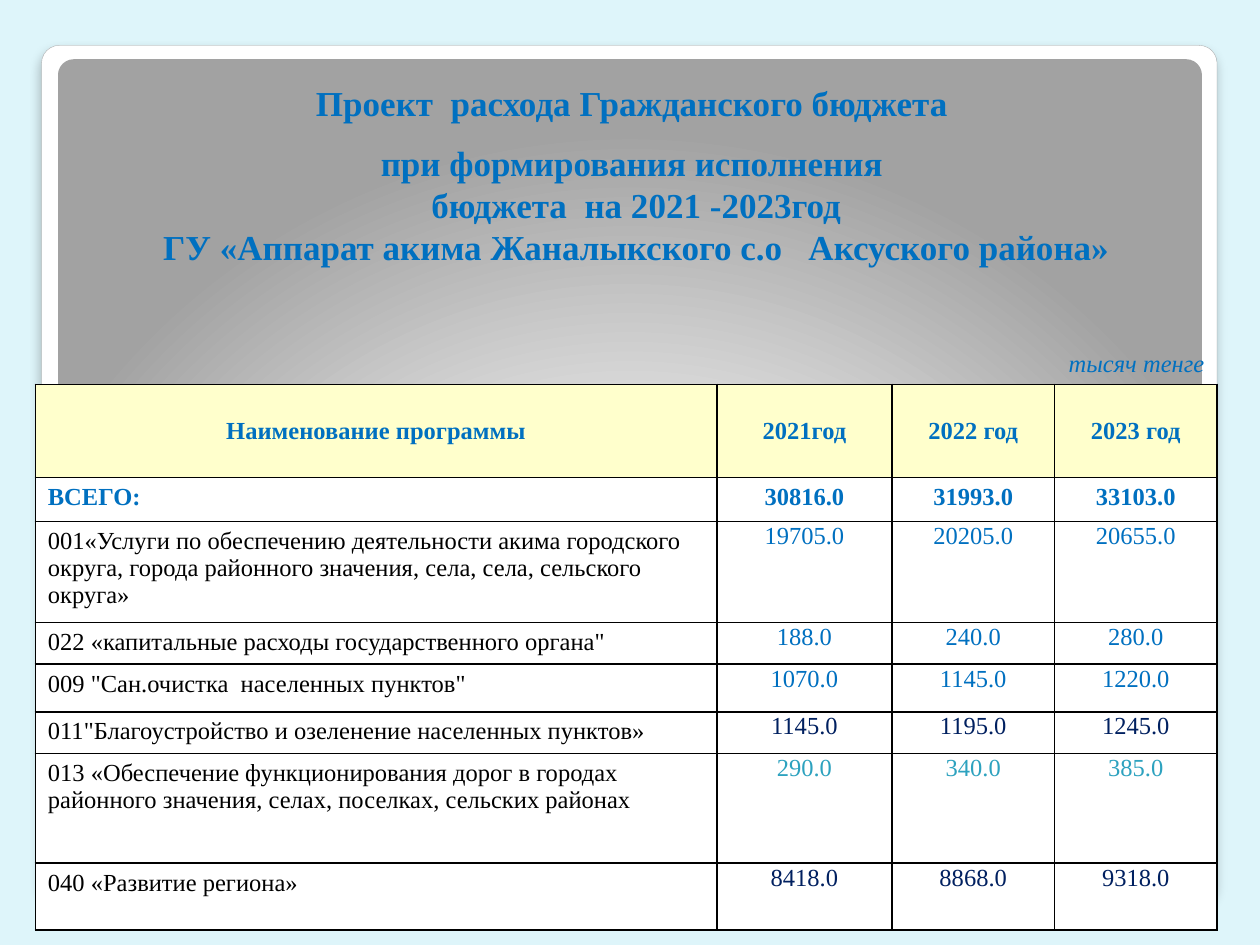
from lxml.etree import SubElement
from pptx import Presentation
from pptx.dml.color import RGBColor
from pptx.enum.shapes import MSO_SHAPE
from pptx.enum.text import MSO_ANCHOR, PP_ALIGN
from pptx.oxml import parse_xml
from pptx.oxml.ns import nsdecls, qn
from pptx.util import Inches, Pt

FONT = "Times New Roman"
BLACK = RGBColor(0, 0, 0)
WHITE = RGBColor(255, 255, 255)
BLUE = RGBColor(0x00, 0x70, 0xC0)
NAVY = RGBColor(0x00, 0x20, 0x60)
TEAL = RGBColor(0x2D, 0xA2, 0xBF)
CREAM = RGBColor(0xFF, 0xFF, 0xCC)
ICE = RGBColor(0xDE, 0xF5, 0xFA)
GRAY = RGBColor(0xA4, 0xA4, 0xA4)
SILVER = RGBColor(0xE1, 0xE1, 0xE1)
STEEL = RGBColor(0xA2, 0xA2, 0xA2)
EDGE_LIGHT = RGBColor(0xF7, 0xF7, 0xF7)
EDGE_DARK = RGBColor(0xDA, 0xDA, 0xDA)

NO_STYLE = "{2D5ABB26-0587-4C30-8999-92F81FD0307C}"
VERTICAL = '<a:lin ang="5400000" scaled="0"/>'
RADIAL = ('<a:path path="circle">'
          '<a:fillToRect l="50000" t="175000" r="50000" b="-75000"/></a:path>')
WIDE_INSETS = (0.1, 0.05, 0.1, 0.05)
TIGHT_INSETS = (0.01, 0.01, 0.01, 0)

TITLE = ("Проект  расхода Гражданского бюджета ",
         "при формирования исполнения \nбюджета  на 2021 -2023год\n"
         "ГУ «Аппарат акима Жаналыкского с.о   Аксуского района»")
COLUMN_WIDTHS = (5.41, 1.39, 1.29, 1.29)
UNIT_HEIGHT = 0.56
HEADER = ("Наименование программы", "2021год", "2022 год", "2023 год")
HEADER_HEIGHT = 0.74
TOTAL = ("ВСЕГО:", "30816.0", "31993.0", "33103.0")
TOTAL_HEIGHT = 0.35
PROGRAMS = (
    (0.8, BLUE, ("001«Услуги по обеспечению деятельности акима городского округа, "
                 "города районного значения, села, села, сельского округа»",
                 "19705.0", "20205.0", "20655.0")),
    (0.33, BLUE, ('022 «капитальные расходы государственного органа"',
                  "188.0", "240.0", "280.0")),
    (0.38, BLUE, ('009 "Сан.очистка  населенных пунктов"',
                  "1070.0", "1145.0", "1220.0")),
    (0.33, NAVY, ('011"Благоустройство и озеленение населенных пунктов»',
                  "1145.0", "1195.0", "1245.0")),
    (0.87, TEAL, ("013 «Обеспечение функционирования дорог в городах районного "
                  "значения, селах, поселках, сельских районах",
                  "290.0", "340.0", "385.0")),
    (0.53, NAVY, ("040 «Развитие региона»", "8418.0", "8868.0", "9318.0")),
)


def set_font(paragraph, size, color, bold=False, italic=False):
    font = paragraph.font
    font.name, font.size, font.bold, font.italic = FONT, Pt(size), bold, italic
    font.color.rgb = color


def add_panel(slide, box, stops, direction):
    shape = slide.shapes.add_shape(MSO_SHAPE.ROUNDED_RECTANGLE, *map(Inches, box))
    shape.adjustments[0] = 0.021
    shape.shadow.inherit = False
    shape.line.fill.background()
    shape.fill.background()
    stop_list = "".join(
        f'<a:gs pos="{position * 1000}"><a:srgbClr val="{color}"/></a:gs>'
        for position, color in stops)
    gradient = parse_xml(f'<a:gradFill {nsdecls("a")} rotWithShape="1">'
                         f'<a:gsLst>{stop_list}</a:gsLst>{direction}</a:gradFill>')
    properties = shape.element.spPr
    properties.replace(properties.find(qn("a:noFill")), gradient)
    return shape


def add_soft_shadow(shape):
    effects = shape.element.spPr.find(qn("a:effectLst"))
    shadow = SubElement(effects, qn("a:outerShdw"), blurRad=str(Pt(6)),
                        dist=str(Pt(4)), dir="5400000", algn="tl", rotWithShape="0")
    color = SubElement(shadow, qn("a:srgbClr"), val=str(BLACK))
    SubElement(color, qn("a:alpha"), val="25000")


def add_title(slide, box):
    frame = slide.shapes.add_textbox(*map(Inches, box)).text_frame
    frame.word_wrap = True
    frame.vertical_anchor = MSO_ANCHOR.BOTTOM
    for index, text in enumerate(TITLE):
        paragraph = frame.add_paragraph() if index else frame.paragraphs[0]
        paragraph.text = text
        paragraph.alignment = PP_ALIGN.CENTER
        paragraph.space_before = Pt(10 * index)
        set_font(paragraph, 20, BLUE, bold=True)


def set_borders(cell, sides):
    properties = cell._tc.get_or_add_tcPr()
    for index, side in enumerate(sides):
        properties.insert(index, parse_xml(
            f'<a:ln{side} {nsdecls("a")} w="{Pt(1)}"><a:solidFill>'
            f'<a:srgbClr val="{BLACK}"/></a:solidFill></a:ln{side}>'))


def fill_cell(cell, text, color, fill=WHITE, insets=WIDE_INSETS,
              align=PP_ALIGN.CENTER, anchor=MSO_ANCHOR.TOP, bold=False, italic=False):
    cell.text = text
    cell.vertical_anchor = anchor
    (cell.margin_left, cell.margin_top,
     cell.margin_right, cell.margin_bottom) = map(Inches, insets)
    if fill is None:
        cell.fill.background()
    else:
        cell.fill.solid()
        cell.fill.fore_color.rgb = fill
    paragraph = cell.text_frame.paragraphs[0]
    paragraph.alignment = align
    set_font(paragraph, 14, color, bold, italic)


def add_budget_table(slide, left, top):
    heights = (UNIT_HEIGHT, HEADER_HEIGHT, TOTAL_HEIGHT, *(row[0] for row in PROGRAMS))
    table = slide.shapes.add_table(
        len(heights), len(COLUMN_WIDTHS), Inches(left), Inches(top),
        Inches(sum(COLUMN_WIDTHS)), Inches(sum(heights))).table
    table.first_row = table.horz_banding = False
    table._tbl.tblPr.find(qn("a:tableStyleId")).text = NO_STYLE
    for column, width in zip(table.columns, COLUMN_WIDTHS):
        column.width = Inches(width)
    for row, height in zip(table.rows, heights):
        row.height = Inches(height)

    table.cell(0, 2).merge(table.cell(0, 3))
    fill_cell(table.cell(0, 2), "тысяч тенге", BLUE, fill=None,
              align=PP_ALIGN.RIGHT, anchor=MSO_ANCHOR.BOTTOM, italic=True)
    for column, (name, total) in enumerate(zip(HEADER, TOTAL)):
        fill_cell(table.cell(1, column), name, BLUE, fill=CREAM,
                  anchor=MSO_ANCHOR.MIDDLE, bold=True)
        fill_cell(table.cell(2, column), total, BLUE, bold=True,
                  align=PP_ALIGN.CENTER if column else PP_ALIGN.LEFT)
    for row, (_, color, (program, *amounts)) in enumerate(PROGRAMS, start=3):
        fill_cell(table.cell(row, 0), program, BLACK, align=PP_ALIGN.LEFT)
        for column, amount in enumerate(amounts, start=1):
            fill_cell(table.cell(row, column), amount, color, insets=TIGHT_INSETS)
    for row in range(len(heights)):
        for column in range(len(COLUMN_WIDTHS)):
            set_borders(table.cell(row, column), "LRTB" if row else "B")


def main():
    presentation = Presentation()
    presentation.slide_width, presentation.slide_height = Inches(10), Inches(7.5)
    slide = presentation.slides.add_slide(presentation.slide_layouts[6])
    slide.background.fill.solid()
    slide.background.fill.fore_color.rgb = ICE

    frame = add_panel(slide, (0.33, 0.36, 9.33, 6.78),
                      ((0, WHITE), (98, WHITE), (99, EDGE_LIGHT), (100, EDGE_DARK)),
                      VERTICAL)
    frame.line.color.rgb = GRAY
    frame.line.width = Pt(0.16)
    add_soft_shadow(frame)
    add_panel(slide, (0.46, 0.47, 9.08, 6),
              ((0, WHITE), (55, SILVER), (100, STEEL)), RADIAL)
    add_budget_table(slide, 0.28, 2.49)
    add_title(slide, (0.52, 0.44, 9.06, 1.73))
    presentation.save("out.pptx")


if __name__ == "__main__":
    main()
